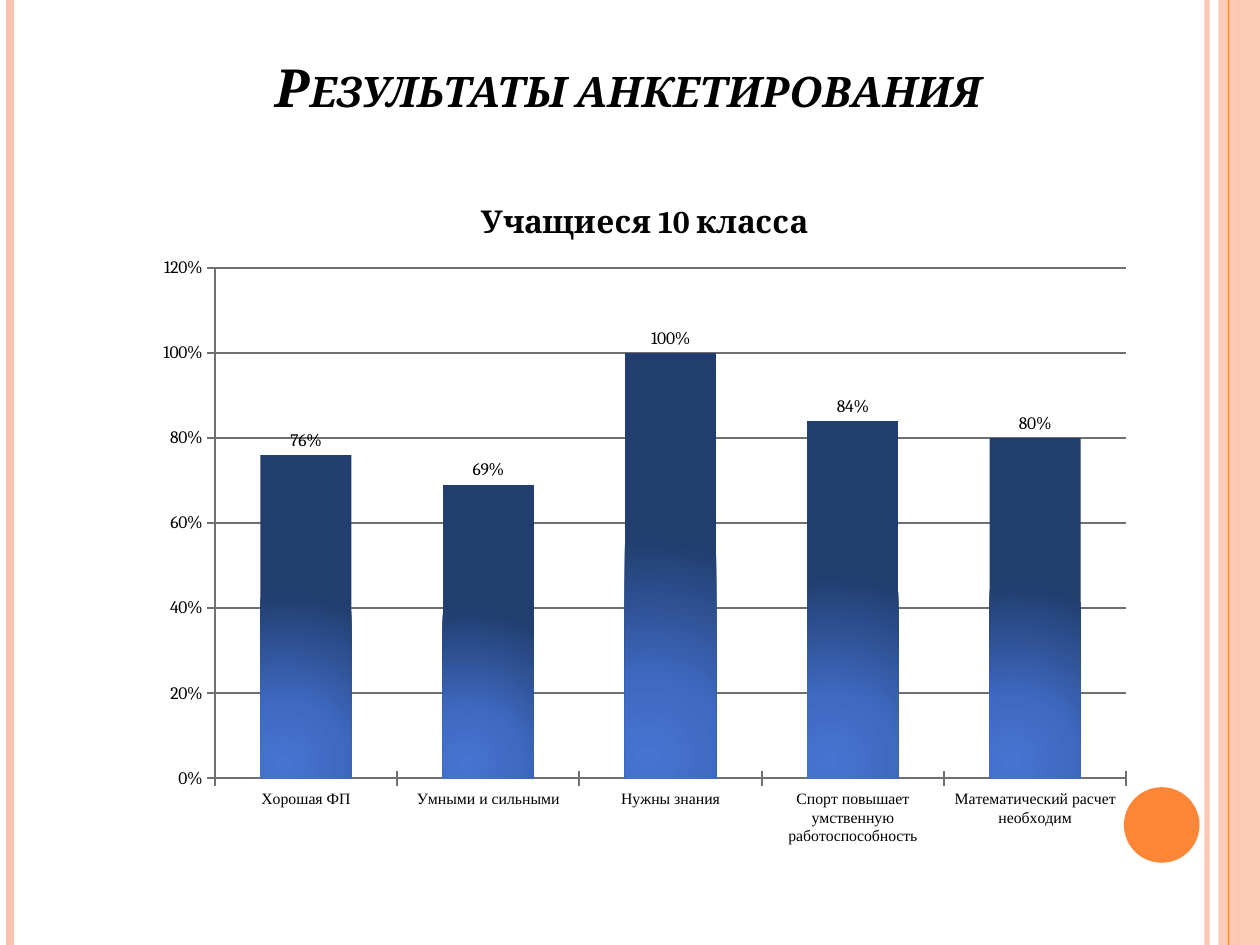
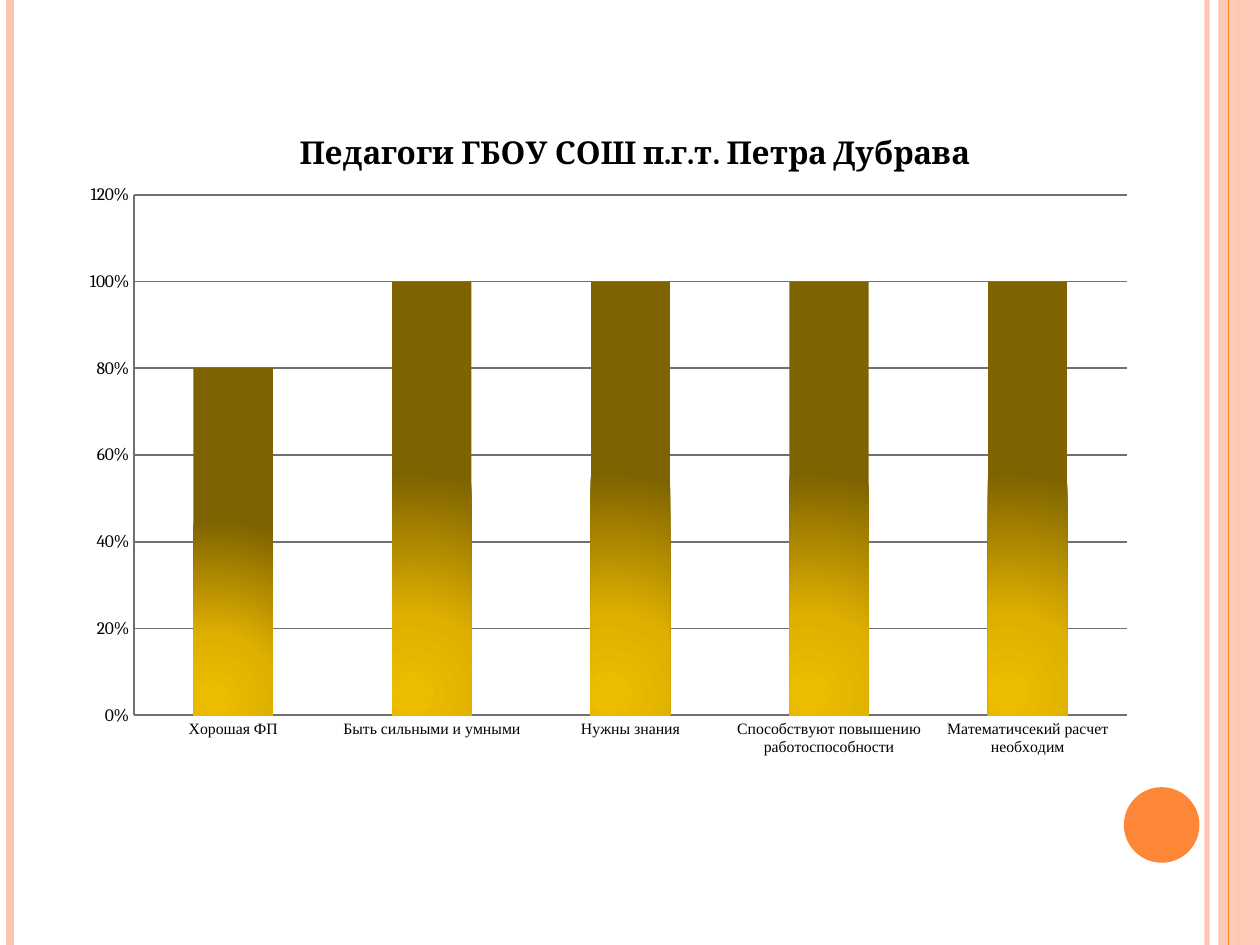
from dataclasses import dataclass

from lxml import etree
from pptx import Presentation
from pptx.chart.data import CategoryChartData
from pptx.dml.color import RGBColor
from pptx.enum.chart import XL_CHART_TYPE as ChartType
from pptx.enum.chart import XL_LABEL_POSITION as LabelPosition
from pptx.enum.chart import XL_TICK_MARK as TickMark
from pptx.enum.shapes import MSO_CONNECTOR as Connector
from pptx.enum.shapes import MSO_SHAPE as Shape
from pptx.enum.text import MSO_ANCHOR as Anchor
from pptx.enum.text import MSO_AUTO_SIZE as AutoSize
from pptx.enum.text import PP_ALIGN as Align
from pptx.oxml import parse_xml
from pptx.oxml.ns import nsdecls, qn
from pptx.util import Inches, Pt

WIDTH, HEIGHT = Inches(10), Inches(7.5)
TITLE_ONLY, BLANK = 5, 6


@dataclass(frozen=True)
class Theme:
    text: str = "000000"
    accent: str = "FE8637"
    band: str = "FEC3AE"
    axis: str = "707070"
    blue: tuple = ("4674D0", "3F6AC2", "223E6F")
    gold: tuple = ("EDBE00", "E0B000", "7E6300")
    font: str = "Cambria"
    category_font: str = "Times New Roman"
    title_size: int = 30
    chart_title_size: int = 18
    value_size: int = 10
    category_size: int = 9


THEME = Theme()


def box(left, top, width, height):
    """Turn shares of the slide size into a position and a size."""
    return (round(left * WIDTH), round(top * HEIGHT),
            round(width * WIDTH), round(height * HEIGHT))


def format_font(font, size, name=THEME.font, bold=False, italic=False):
    font.name, font.size = name, Pt(size)
    font.bold, font.italic = bold, italic
    font.color.rgb = RGBColor.from_string(THEME.text)


def write_text(frame, text, align=Align.CENTER, small_caps=False, **font_format):
    paragraph = frame.paragraphs[0]
    paragraph.alignment = align
    run = paragraph.add_run()
    run.text = text
    format_font(run.font, **font_format)
    if small_caps:
        run.font._element.set("cap", "small")


def set_opacity(shape, percent):
    for color in shape.element.spPr.iter(qn("a:srgbClr")):
        etree.SubElement(color, qn("a:alpha"), val=str(percent * 1000))


def add_stripe(slide, left, color, width):
    """Draw a vertical line over the whole height of the slide."""
    x = round(left * WIDTH)
    stripe = slide.shapes.add_connector(Connector.STRAIGHT, x, 0, x, HEIGHT)
    stripe.line.color.rgb = RGBColor.from_string(color)
    stripe.line.width = Pt(width)
    etree.SubElement(stripe.element.spPr, qn("a:effectLst"))
    return stripe


def add_plain_shape(slide, kind, area, color):
    shape = slide.shapes.add_shape(kind, *box(*area))
    shape.shadow.inherit = False
    shape.fill.solid()
    shape.fill.fore_color.rgb = RGBColor.from_string(color)
    shape.line.fill.background()
    return shape


def decorate_master(slide):
    """Draw the shared edge bands on a slide and move them to its master."""
    pale_stripe = add_stripe(slide, 0.958, THEME.band, 3)
    left_stripe = add_stripe(slide, 0.008, THEME.band, 4.5)
    accent_stripe = add_stripe(slide, 0.975, THEME.accent, 0.75)
    right_stripe = add_stripe(slide, 0.983, THEME.band, 1.5)
    accent_stripe.line.width, right_stripe.line.width = Pt(0.75), Pt(0.75)
    edge_band = add_plain_shape(slide, Shape.RECTANGLE, (0.967, 0, 0.033, 1), THEME.band)
    number_disc = add_plain_shape(slide, Shape.OVAL, (0.892, 0.833, 0.06, 0.08), THEME.accent)
    set_opacity(pale_stripe, 93)
    set_opacity(edge_band, 87)
    tree = slide.slide_layout.slide_master.shapes.element
    parts = (pale_stripe, left_stripe, edge_band, accent_stripe, right_stripe, number_disc)
    for number, part in enumerate(parts, start=100):
        part.element.xpath(".//p:cNvPr")[0].set("id", str(number))
        tree.append(part.element)
    accent_stripe.line.color.rgb = RGBColor.from_string(THEME.accent)


def set_title(slide, text, area):
    title = slide.shapes.title
    title.left, title.top, title.width, title.height = box(*area)
    frame = title.text_frame
    frame.auto_size = AutoSize.NONE
    frame.vertical_anchor = Anchor.BOTTOM
    write_text(frame, text, size=THEME.title_size, bold=True, italic=True, small_caps=True)


def glow_fill(series, colors):
    """Fill bars with a round gradient that is brightest at the lower left."""
    stops = "".join(
        f'<a:gs pos="{position}"><a:srgbClr val="{color}"/></a:gs>'
        for position, color in zip((0, 35000, 100000), colors))
    properties = series.format.fill._xPr
    properties.insert(0, parse_xml(
        f'<a:gradFill {nsdecls("a")} rotWithShape="1"><a:gsLst>{stops}</a:gsLst>'
        '<a:path path="circle"><a:fillToRect l="25000" t="95000" r="75000" b="5000"/>'
        '</a:path></a:gradFill>'))


def layout_xml(target, **shares):
    """Describe a manual chart layout in shares of the chart area."""
    inner = f'<c:layoutTarget val="{target}"/>' if target else ""
    modes = "".join(f'<c:{key}Mode val="edge"/>' for key in ("x", "y"))
    values = "".join(f'<c:{key} val="{value}"/>' for key, value in shares.items())
    return parse_xml(f'<c:layout {nsdecls("c")}><c:manualLayout>{inner}{modes}{values}'
                     '</c:manualLayout></c:layout>')


def place_plot(chart, x, y, w, h):
    plot_area = chart.element.chart.plotArea
    for old_layout in plot_area.findall(qn("c:layout")):
        plot_area.remove(old_layout)
    plot_area.insert(0, layout_xml("inner", x=x, y=y, w=w, h=h))


def format_axis(axis, tick, line_width, **font_format):
    axis.major_tick_mark, axis.minor_tick_mark = tick, TickMark.NONE
    format_font(axis.tick_labels.font, **font_format)
    style_line(axis.format.line, line_width)


def style_line(line, width):
    line.color.rgb = RGBColor.from_string(THEME.axis)
    line.width = Pt(width)


def add_survey_chart(slide, area, title, answers, colors, plot, gap,
                     tick=TickMark.NONE, line_width=1, labels=False):
    data = CategoryChartData(number_format="0%")
    data.categories = list(answers)
    data.add_series(title, list(answers.values()))
    chart = slide.shapes.add_chart(ChartType.COLUMN_CLUSTERED, *box(*area), data).chart
    format_font(chart.font, THEME.value_size)
    chart.has_legend = False
    chart.has_title = True
    write_text(chart.chart_title.text_frame, title, size=THEME.chart_title_size, bold=True)
    place_plot(chart, *plot)

    format_axis(chart.category_axis, tick, line_width,
                size=THEME.category_size, name=THEME.category_font)
    scale = chart.value_axis
    format_axis(scale, tick, line_width, size=THEME.value_size)
    scale.minimum_scale, scale.maximum_scale, scale.major_unit = 0, 1.2, 0.2
    scale.tick_labels.number_format = "0%"
    scale.tick_labels.number_format_is_linked = False
    style_line(scale.major_gridlines.format.line, line_width)

    bars = chart.plots[0]
    bars.gap_width, bars.vary_by_categories = gap, False
    glow_fill(bars.series[0], colors)
    if labels:
        bars.has_data_labels = True
        bars.data_labels.show_value = True
        bars.data_labels.number_format = "0%"
        bars.data_labels.number_format_is_linked = False
        bars.data_labels.position = LabelPosition.OUTSIDE_END
        format_font(bars.data_labels.font, THEME.value_size)


def main():
    presentation = Presentation()
    presentation.slide_width, presentation.slide_height = WIDTH, HEIGHT
    layouts = presentation.slide_layouts

    pupils = presentation.slides.add_slide(layouts[TITLE_ONLY])
    decorate_master(pupils)
    set_title(pupils, "Результаты анкетирования", (0.13, 0.04, 0.737, 0.092))
    add_survey_chart(
        pupils, (0.114, 0.185, 0.795, 0.724), "Учащиеся 10 класса",
        {"Хорошая ФП": 0.76, "Умными и сильными": 0.69, "Нужны знания": 1,
         "Спорт повышает умственную работоспособность": 0.84,
         "Математический расчет необходим": 0.8},
        THEME.blue, plot=(0.071, 0.136, 0.91, 0.746), gap=100,
        tick=TickMark.CROSS, line_width=1.25, labels=True)

    teachers = presentation.slides.add_slide(layouts[BLANK])
    add_survey_chart(
        teachers, (0.051, 0.112, 0.906, 0.704), "Педагоги ГБОУ СОШ п.г.т. Петра Дубрава",
        {"Хорошая ФП": 0.8, "Быть сильными и умными": 1, "Нужны знания": 1,
         "Способствуют повышению работоспособности": 1,
         "Математичсекий расчет необходим": 1},
        THEME.gold, plot=(0.061, 0.134, 0.87, 0.782), gap=150)

    presentation.save("out.pptx")


if __name__ == "__main__":
    main()
